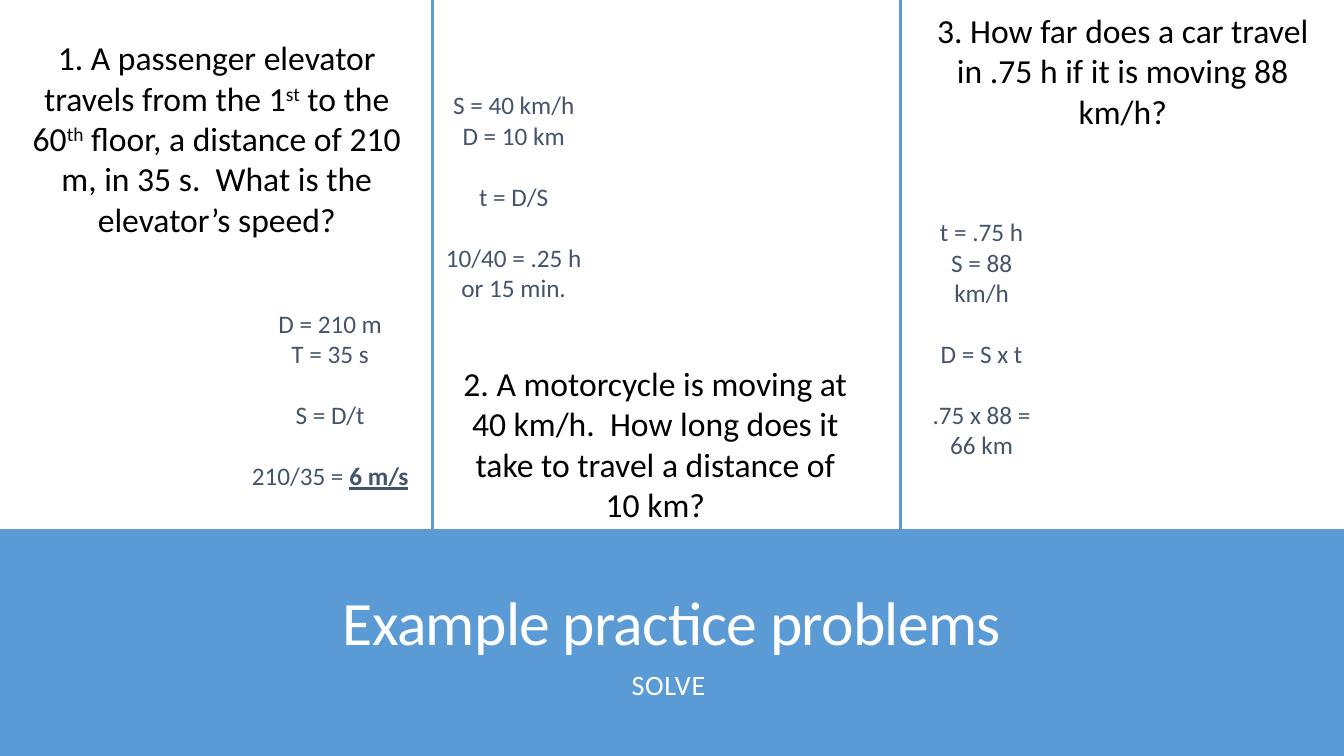
from pptx import Presentation
from pptx.dml.color import RGBColor
from pptx.enum.shapes import MSO_CONNECTOR, MSO_SHAPE
from pptx.enum.text import MSO_ANCHOR, PP_ALIGN
from pptx.oxml.ns import qn
from pptx.util import Inches, Pt

BLUE = RGBColor(0x5B, 0x9B, 0xD5)
SLATE = RGBColor(0x44, 0x54, 0x6A)
BLACK = RGBColor(0, 0, 0)
WHITE = RGBColor(255, 255, 255)
CENTER = PP_ALIGN.CENTER
BOTTOM = MSO_ANCHOR.BOTTOM
STRAIGHT = MSO_CONNECTOR.STRAIGHT
RECT = MSO_SHAPE.RECTANGLE

deck = Presentation()
deck.slide_width, deck.slide_height = Inches(13.33), Inches(7.5)
slide = deck.slides.add_slide(deck.slide_layouts[6])


def add_text(place, lines, size, color):
    """Add a centred text box; each line is a list of run texts."""
    box = slide.shapes.add_textbox(*[Inches(n) for n in place])
    frame = box.text_frame
    frame.word_wrap = True
    for i, line in enumerate(lines):
        para = frame.add_paragraph() if i else frame.paragraphs[0]
        para.alignment = CENTER
        for text in line:
            run = para.add_run()
            run.text = text
            run.font.name = "Calibri"
            run.font.size = Pt(size)
            run.font.color.rgb = color
    return frame


# Title band
band = slide.shapes.add_shape(RECT, 0, Inches(5.25), Inches(13.33), Inches(2.25))
band.shadow.inherit = False
band.fill.solid()
band.fill.fore_color.rgb = BLUE
band.line.fill.background()

title = add_text((0.58, 5.59, 12.17, 1), [["Example practice problems"]], 44, WHITE)
title.vertical_anchor = BOTTOM
solve = add_text((0.58, 6.61, 12.17, 0.62), [["SOLVE "]], 20, WHITE)
for frame, track in ((title, "-50"), (solve, "50")):
    para = frame.paragraphs[0]
    para.line_spacing = 0.9
    para.runs[0]._r.get_or_add_rPr().set("spc", track)

# Column dividers
for x in (4.29, 8.93):
    rule = slide.shapes.add_connector(STRAIGHT, Inches(x), 0, Inches(x), Inches(5.37))
    rule.line.color.rgb = BLUE
    rule.line.width = Pt(2.25)
    props = rule._element.spPr
    props.append(props.makeelement(qn("a:effectLst"), {}))

# Questions
asks = [
    ((0.21, 0.32, 3.88, 2.12),
     ["1. A passenger elevator travels from the 1", "st", " to the 60", "th",
      " floor, a distance of 210 m, in 35 s.  What is the elevator’s speed?"]),
    ((4.43, 3.55, 4.14, 1.72),
     ["2. A motorcycle is moving at 40 km/h.  How long does it take to travel "
      "a distance of 10 km?"]),
    ((9.06, 0.05, 4.15, 1.31),
     ["3. How far does a car travel in .75 h if it is moving 88 km/h?"]),
]
for place, parts in asks:
    frame = add_text(place, [parts], 24, BLACK)
    for run in frame.paragraphs[0].runs:
        if run.text in ("st", "th"):
            run._r.get_or_add_rPr().set("baseline", "30000")

# Answers: givens, then formula and result, each set off by one line
answers = [
    ((2.26, 3.01, 2.03, 1.92),
     [["D = 210 m"], ["T = 35 s"], ["S = D/t"], ["210/35 = ", "6 m/s"]]),
    ((4.19, 0.84, 1.81, 2.27),
     [["S = 40 km/h"], ["D = 10 km"], ["t = D/S"], ["10/40 = .25 h or 15 min."]]),
    ((9.04, 2.1, 1.39, 2.62),
     [["t = .75 h"], ["S = 88"], ["km/h"], ["D = S x t"], [".75 x 88 = 66 km"]]),
]
for place, lines in answers:
    frame = add_text(place, lines, 18, SLATE)
    for para in frame.paragraphs[-2:]:
        para.space_before = Pt(22)
    for para in frame.paragraphs:
        if para.text == "S = 88":
            props = para._p.get_or_add_pPr()
            props.set("marL", "0")
            props.set("indent", str(Inches(-0.28)))
        for run in para.runs:
            if run.text == "6 m/s":
                run.font.bold = run.font.underline = True

deck.save("out.pptx")
